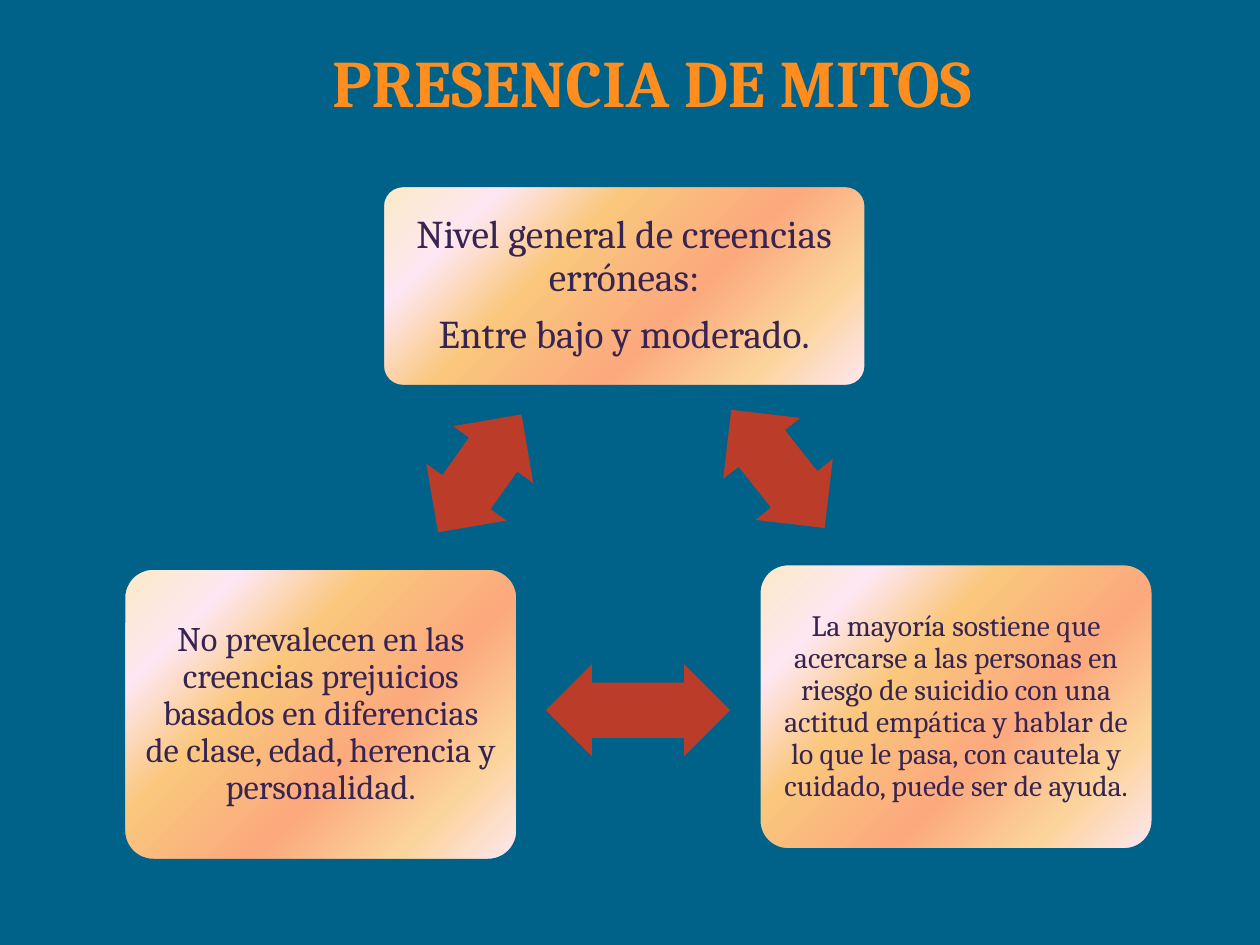
from copy import deepcopy

from pptx import Presentation
from pptx.dml.color import RGBColor
from pptx.enum.shapes import MSO_SHAPE
from pptx.enum.text import MSO_ANCHOR, PP_ALIGN
from pptx.oxml.ns import qn
from pptx.util import Inches, Pt

BACKGROUND = "006288"
TITLE_COLOR = "FF8E1E"
TEXT_COLOR = "372451"
ARROW_COLOR = "BB3D29"
BOX_STOPS = [(0, "FBEAC7"), (18, "FEE7F2"), (36, "FAC77D"),
             (61, "FBA97D"), (82, "FBD49C"), (100, "FEE7F2")]


def color(value):
    return RGBColor.from_string(value)


def write(frame, text, size, ink=TEXT_COLOR, bold=False, line_spacing=None, space_after=0):
    frame.word_wrap = True
    for index, line in enumerate(text.split("\n")):
        para = frame.paragraphs[0] if index == 0 else frame.add_paragraph()
        para.alignment = PP_ALIGN.CENTER
        para.line_spacing = line_spacing
        para.space_after = Pt(space_after)
        span = para.add_run()
        span.text = line
        span.font.name = "Cambria"
        span.font.size = Pt(size)
        span.font.bold = bold
        span.font.color.rgb = color(ink)


class MythSlide:
    """Draws the title, boxes and arrows of the myths slide in one style."""

    def __init__(self, deck):
        self.page = deck.slides.add_slide(deck.slide_layouts[6])
        self.page.background.fill.solid()
        self.page.background.fill.fore_color.rgb = color(BACKGROUND)

    def title(self, text, left, top, width, height):
        box = self.page.shapes.add_textbox(*map(Inches, (left, top, width, height)))
        write(box.text_frame, text, 54, ink=TITLE_COLOR, bold=True)

    def shape(self, kind, left, top, width, height):
        shape = self.page.shapes.add_shape(kind, *map(Inches, (left, top, width, height)))
        shape.shadow.inherit = False
        return shape

    def paint_gradient(self, shape):
        shape.fill.gradient()
        shape.fill.gradient_angle = 315
        stop_list = next(shape.element.spPr.iter(qn("a:gsLst")))
        for _ in BOX_STOPS[2:]:
            stop_list.append(deepcopy(stop_list[0]))
        for stop, (position, value) in zip(shape.fill.gradient_stops, BOX_STOPS):
            stop.position = position / 100
            stop.color.rgb = color(value)

    def box(self, text, size, inset, *place):
        box = self.shape(MSO_SHAPE.ROUNDED_RECTANGLE, *place)
        box.adjustments[0] = 0.1
        self.paint_gradient(box)
        box.line.color.rgb = color(BACKGROUND)
        box.line.width = Pt(2)
        frame = box.text_frame
        frame.vertical_anchor = MSO_ANCHOR.MIDDLE
        frame.margin_left = frame.margin_right = Inches(inset)
        frame.margin_top = frame.margin_bottom = Inches(inset)
        write(frame, text, size, line_spacing=0.9, space_after=12)

    def arrow(self, rotation, *place):
        arrow = self.shape(MSO_SHAPE.LEFT_RIGHT_ARROW, *place)
        arrow.adjustments[0] = 0.6
        arrow.adjustments[1] = 0.5
        arrow.rotation = rotation
        arrow.fill.solid()
        arrow.fill.fore_color.rgb = color(ARROW_COLOR)
        arrow.line.fill.background()


def main():
    deck = Presentation()
    deck.slide_width = Inches(14.22)
    deck.slide_height = Inches(10.67)
    slide = MythSlide(deck)
    slide.title("PRESENCIA DE MITOS", 2.71, 0.41, 9.29, 1.01)
    slide.box("Nivel general de creencias erróneas:\nEntre bajo y moderado.",
              32, 0.13, 4.32, 2.1, 5.45, 2.26)
    slide.box("La mayoría sostiene que acercarse a las personas en riesgo de suicidio "
              "con una actitud empática y hablar de lo que le pasa, con cautela y "
              "cuidado, puede ser de ayuda.", 24, 0.1, 8.57, 6.37, 4.44, 3.22)
    slide.box("No prevalecen en las creencias prejuicios basados en diferencias de "
              "clase, edad, herencia y personalidad.", 28, 0.12, 1.4, 6.42, 4.44, 3.29)
    slide.arrow(51.7, 7.93, 4.74, 1.7, 1.11)
    slide.arrow(0, 6.16, 7.5, 2.08, 1.04)
    slide.arrow(305.3, 4.6, 4.79, 1.63, 1.11)
    deck.save("out.pptx")


if __name__ == "__main__":
    main()
